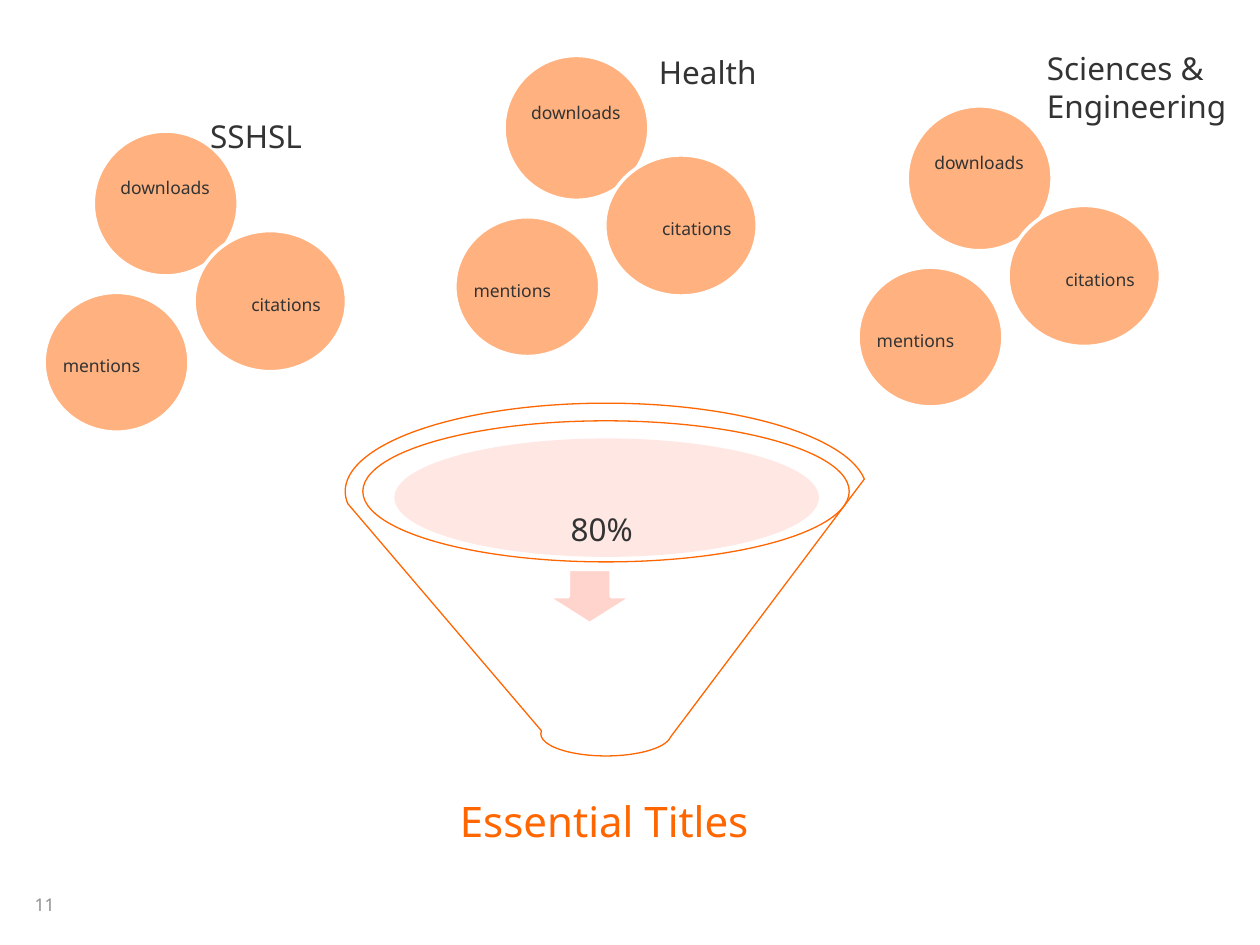
from lxml import etree
from pptx import Presentation
from pptx.dml.color import RGBColor
from pptx.enum.shapes import MSO_SHAPE
from pptx.enum.text import MSO_ANCHOR, MSO_AUTO_SIZE, PP_ALIGN
from pptx.oxml.ns import qn
from pptx.util import Inches, Pt

ELLIPSE, FUNNEL, DOWN_ARROW = MSO_SHAPE.OVAL, MSO_SHAPE.FUNNEL, MSO_SHAPE.DOWN_ARROW
TOP, MIDDLE = MSO_ANCHOR.TOP, MSO_ANCHOR.MIDDLE
LEFT, CENTER = PP_ALIGN.LEFT, PP_ALIGN.CENTER

THEME = {
    "font": "Noto Sans",
    "text": "333333", "accent": "FF6600", "white": "FFFFFF",
    "pool": "FFC6BD", "arrow": "FFB8AB", "muted": "909090",
    "small": 10, "label": 18, "title": 24,
}

presentation = Presentation()
presentation.slide_width, presentation.slide_height = Inches(10), Inches(7.5)
COLUMN = presentation.slide_width / 100
ROW = presentation.slide_height / 75
slide = presentation.slides.add_slide(presentation.slide_layouts[5])


def add_figure(shapes, kind, box, fill, opacity=100, line=None, weight=2):
    left, top, width, height = box
    shape = shapes.add_shape(kind, int(left * COLUMN), int(top * ROW),
                             int(width * COLUMN), int(height * ROW))
    shape.shadow.inherit = False
    shape.fill.solid()
    shape.fill.fore_color.rgb = RGBColor.from_string(THEME[fill])
    if opacity < 100:
        color = shape.fill._xPr.find(qn("a:solidFill"))[0]
        etree.SubElement(color, qn("a:alpha"), val=str(opacity * 1000))
    if line:
        shape.line.color.rgb = RGBColor.from_string(THEME[line])
        shape.line.width = Pt(weight)
    else:
        shape.line.fill.background()


def write_text(shape, box, words, size, color="text", align=LEFT, anchor=TOP,
               margins=(0.1, 0.05), spacing=None):
    left, top, width, height = box
    shape.left, shape.top = int(left * COLUMN), int(top * ROW)
    shape.width, shape.height = int(width * COLUMN), int(height * ROW)
    frame = shape.text_frame
    frame.word_wrap = True
    frame.auto_size = MSO_AUTO_SIZE.NONE
    frame.vertical_anchor = anchor
    frame.margin_left = frame.margin_right = Inches(margins[0])
    frame.margin_top = frame.margin_bottom = Inches(margins[1])
    paragraph = frame.paragraphs[0]
    paragraph.alignment = align
    paragraph.line_spacing = spacing
    run = paragraph.add_run()
    run.text = words
    run.font.name = THEME["font"]
    run.font.size = Pt(THEME[size])
    run.font.color.rgb = RGBColor.from_string(THEME[color])


write_text(slide.shapes.title, (28.2, 57, 39.5, 16.7), "Essential Titles", "title",
           "accent", CENTER, MIDDLE, (0.19, 0.19), 0.9)
write_text(slide.shapes.add_textbox(0, 0, 0, 0), (0.4, 69.8, 6.3, 3.9), "11",
           "small", "muted", CENTER, MIDDLE)

funnel = slide.shapes.add_group_shape()
add_figure(funnel.shapes, ELLIPSE, (31.3, 34.8, 33.7, 9.4), "pool", 40)
add_figure(funnel.shapes, DOWN_ARROW, (43.4, 45.2, 6.8, 4.3), "arrow", line="white")
add_figure(funnel.shapes, FUNNEL, (27.4, 32, 41.4, 28), "white", 40, "accent", 0.75)

measures = [
    ("downloads", (0, 0, 11.5, 11.5), (1.5, 2, 8.4, 5.2)),
    ("citations", (8, 7.9, 12.1, 11.2), (11.7, 10.8, 7.2, 6.1)),
    ("mentions", (-3.9, 12.8, 11.5, 11.1), (-2.8, 15.7, 6.9, 6.1)),
]
subjects = [
    ("SSHSL", (7.4, 10.4), (15.7, 8.8, 11.8, 4)),
    ("Health", (40, 4.4), (51.3, 3.7, 19.1, 4)),
    ("Sciences & Engineering", (72, 8.4), (82.1, 3.4, 17.2, 10.1)),
]
for subject, (column, row), label_box in subjects:
    cluster = slide.shapes.add_group_shape()
    for measure, circle, caption in measures:
        circle_box = (column + circle[0], row + circle[1], *circle[2:])
        caption_box = (column + caption[0], row + caption[1], *caption[2:])
        add_figure(cluster.shapes, ELLIPSE, circle_box, "accent", 50, "white")
        write_text(cluster.shapes.add_textbox(0, 0, 0, 0), caption_box, measure,
                   "small", "text", CENTER, MIDDLE, (0, 0), 0.9)
    # the group's extents follow its members
    write_text(slide.shapes.add_textbox(0, 0, 0, 0), label_box, subject, "label")

write_text(slide.shapes.add_textbox(0, 0, 0, 0), (44.3, 40, 7.8, 4), "80%", "label")

presentation.save("out.pptx")
